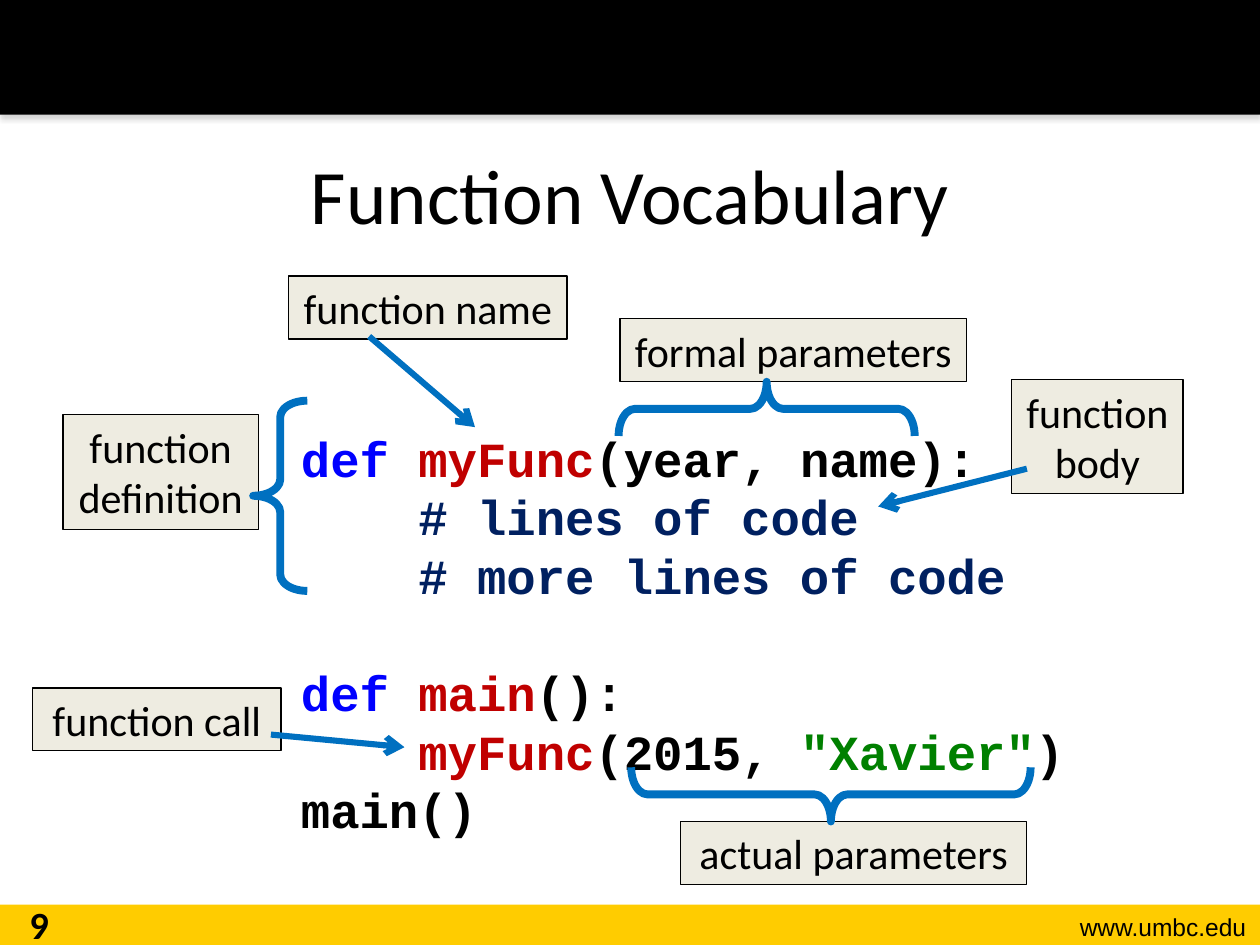
from dataclasses import dataclass

from lxml.etree import SubElement as Sub
from pptx import Presentation
from pptx.dml.color import RGBColor as Rgb
from pptx.enum.shapes import MSO_CONNECTOR as Line, MSO_SHAPE as Shape
from pptx.enum.text import MSO_ANCHOR as Anchor, PP_ALIGN as Align
from pptx.oxml.ns import qn
from pptx.util import Inches, Pt


@dataclass(frozen=True)
class Theme:
    black: str = "000000"
    gold: str = "FFCC00"
    cream: str = "EEECE1"
    blue: str = "0070C0"
    gray: str = "808080"
    key: str = "0000FF"
    name: str = "C00000"
    note: str = "002060"
    quote: str = "008000"
    sans: str = "Calibri"
    mono: str = "Courier New"
    web: str = "Arial"
    title: int = 44
    code: int = 28
    label: int = 24
    page: int = 22
    small: int = 14
    pitch: float = 33.5


def write(frame, lines, font, size, color, bold=False, align=Align.LEFT,
          anchor=Anchor.TOP, pitch=None, gaps=()):
    """Fill a frame; each line is a list of (text, color or None) parts.

    Lines whose index is in gaps get one extra line of space before.
    """
    frame.word_wrap = True
    frame.vertical_anchor = anchor
    for i, parts in enumerate(lines):
        para = frame.paragraphs[0] if i == 0 else frame.add_paragraph()
        para.alignment = align
        if pitch:
            para.line_spacing = Pt(pitch)
        if i in gaps:
            para.space_before = Pt(pitch)
        for text, tint in parts:
            run = para.add_run()
            run.text = text
            run.font.name = font
            run.font.size = Pt(size)
            run.font.bold = bold
            run.font.color.rgb = Rgb.from_string(tint or color)


class Deck:
    def __init__(self, theme):
        self.theme = theme
        self.file = Presentation()
        self.file.slide_width, self.file.slide_height = Inches(10), Inches(7.5)
        self.slide = self.file.slides.add_slide(self.file.slide_layouts[6])

    def shape(self, kind, box, fill=None, line=None, width=0.75):
        item = self.slide.shapes.add_shape(kind, *map(Inches, box))
        item.shadow.inherit = False
        if fill:
            item.fill.solid()
            item.fill.fore_color.rgb = Rgb.from_string(fill)
        else:
            item.fill.background()
        if line:
            item.line.color.rgb = Rgb.from_string(line)
            item.line.width = Pt(width)
        else:
            item.line.fill.background()
        return item

    def bar(self, box, fill, shade=False):
        item = self.shape(Shape.RECTANGLE, box, fill)
        if shade:
            glow = Sub(item.element.spPr.find(qn("a:effectLst")), qn("a:outerShdw"),
                       blurRad=str(Pt(3.1)), dist=str(Pt(1.8)), dir="5400000")
            tint = Sub(glow, qn("a:srgbClr"), val=self.theme.gray)
            Sub(tint, qn("a:alpha"), val="35000")

    def text(self, box, lines, *look, inset=0.05, **more):
        frame = self.slide.shapes.add_textbox(*map(Inches, box)).text_frame
        frame.margin_top = Inches(inset)
        write(frame, lines, *look, **more)

    def label(self, text, box):
        look = self.theme
        item = self.shape(Shape.RECTANGLE, box, look.cream, look.black)
        item.text_frame.margin_left = item.text_frame.margin_right = Inches(0.05)
        write(item.text_frame, [[(text, None)]], look.sans, look.label, look.black,
              align=Align.CENTER, anchor=Anchor.MIDDLE)

    def brace(self, box, turn=0):
        item = self.shape(Shape.RIGHT_BRACE, box, line=self.theme.blue, width=4.5)
        item.adjustments[0], item.adjustments[1] = 0.302, 0.5
        item.rotation = turn
        item.element.spPr.find(qn("a:xfrm")).set("flipH", "1")

    def arrow(self, start, end):
        item = self.slide.shapes.add_connector(
            Line.STRAIGHT, *map(Inches, start + end))
        item.line.color.rgb = Rgb.from_string(self.theme.blue)
        item.line.width = Pt(3.5)
        props = item.element.spPr
        Sub(props.find(qn("a:ln")), qn("a:tailEnd"), type="arrow")
        Sub(props, qn("a:effectLst"))


def main():
    look = Theme()
    deck = Deck(look)

    # Bars, footer and title
    deck.bar((0, 7.18, 10, 0.32), look.gold)
    deck.bar((0, 0, 10, 0.91), look.black, shade=True)
    deck.text((8, 7.19, 1.99, 0.34), [[("www.umbc.edu", None)]],
              look.web, look.small, look.black, align=Align.RIGHT)
    deck.text((0.5, 0.91, 9, 1.25), [[("Function Vocabulary", None)]],
              look.sans, look.title, look.black,
              align=Align.CENTER, anchor=Anchor.MIDDLE)
    deck.text((0, 7.1, 0.62, 0.4), [[("9", None)]],
              look.sans, look.page, look.black, bold=True, align=Align.CENTER)

    # Code sample
    code = [
        [("def ", look.key), ("myFunc", look.name), ("(year, name):", None)],
        [("    # lines of code", look.note)],
        [("    # more lines of code", look.note)],
        [("def ", look.key), ("main", look.name), ("():", None)],
        [("    myFunc", look.name), ("(2015, ", None),
         ('"Xavier"', look.quote), (")", None)],
        [("main()", None)],
    ]
    deck.text((2.29, 3.29, 8.21, 3.4), code, look.mono, look.code, look.black,
              bold=True, pitch=look.pitch, gaps=(3,), inset=0.11)

    # Labels
    for text, box in (
        ("function name", (2.29, 2.19, 2.21, 0.5)),
        ("formal parameters", (4.92, 2.53, 2.75, 0.5)),
        ("actual parameters", (5.4, 6.52, 2.75, 0.5)),
        ("function body", (8.03, 3.01, 1.36, 0.91)),
        ("function call", (0.26, 5.46, 1.97, 0.5)),
        ("function definition", (0.5, 3.29, 1.55, 0.91)),
    ):
        deck.label(text, box)

    # Braces around the parameters and the definition
    deck.brace((5.87, 2.07, 0.43, 2.35), 90)
    deck.brace((6.38, 4.72, 0.43, 3.17), 270)
    deck.brace((2.01, 3.18, 0.43, 1.51))

    # Arrows from labels to code
    for start, end in (
        ((2.93, 2.67), (3.77, 3.39)),
        ((8.15, 3.72), (6.97, 4.02)),
        ((2.15, 5.83), (3.21, 5.93)),
    ):
        deck.arrow(start, end)

    deck.file.save("out.pptx")


if __name__ == "__main__":
    main()
